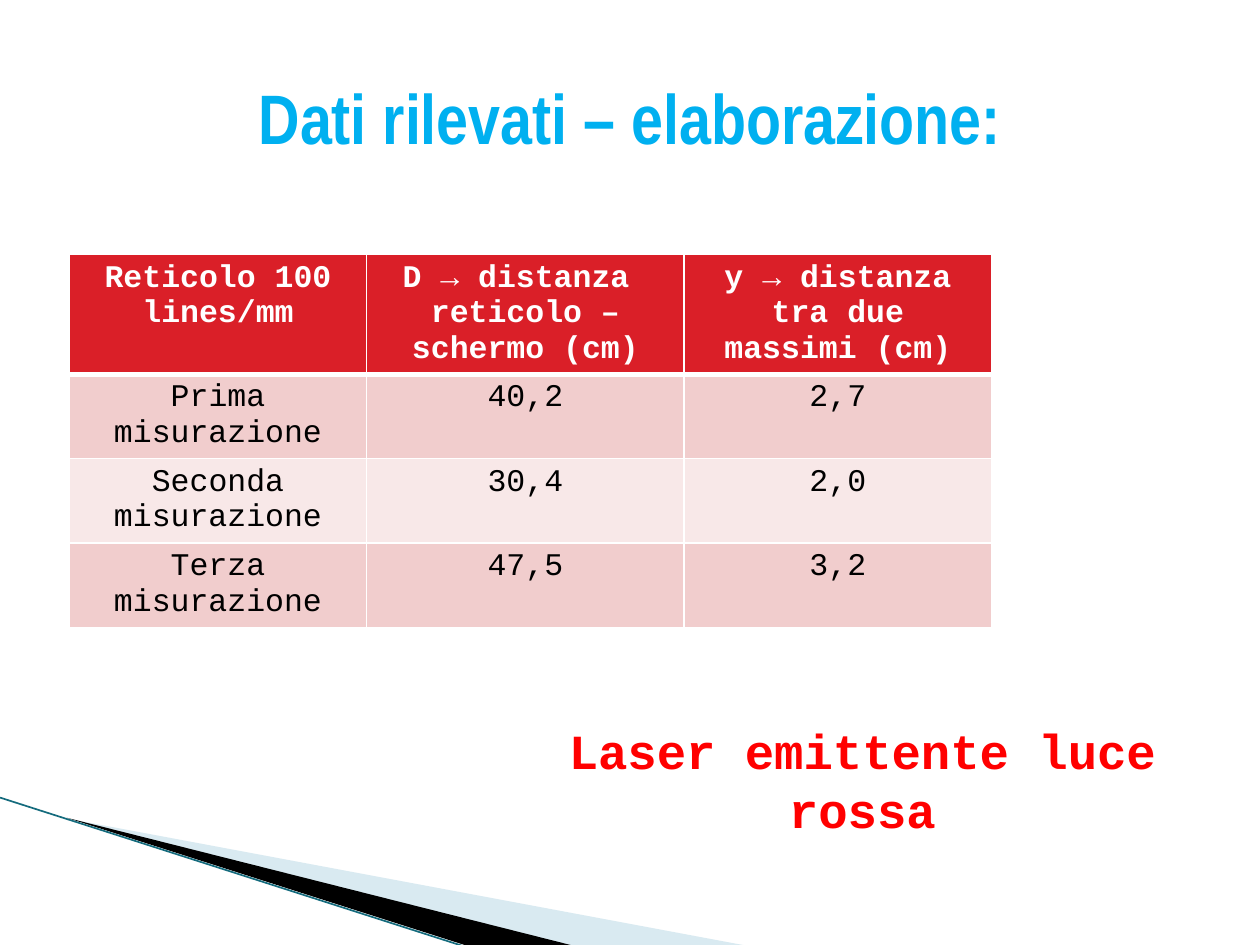
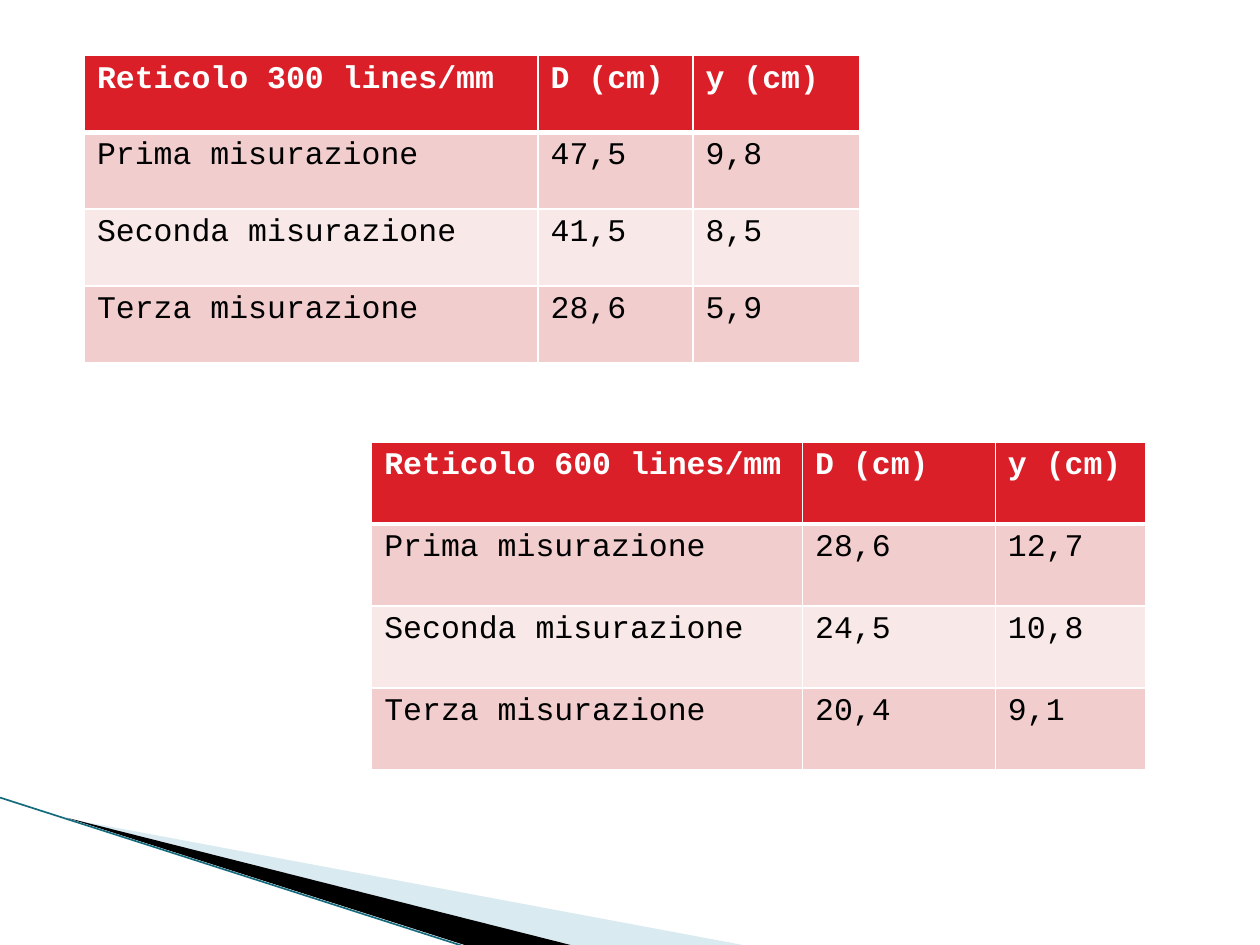
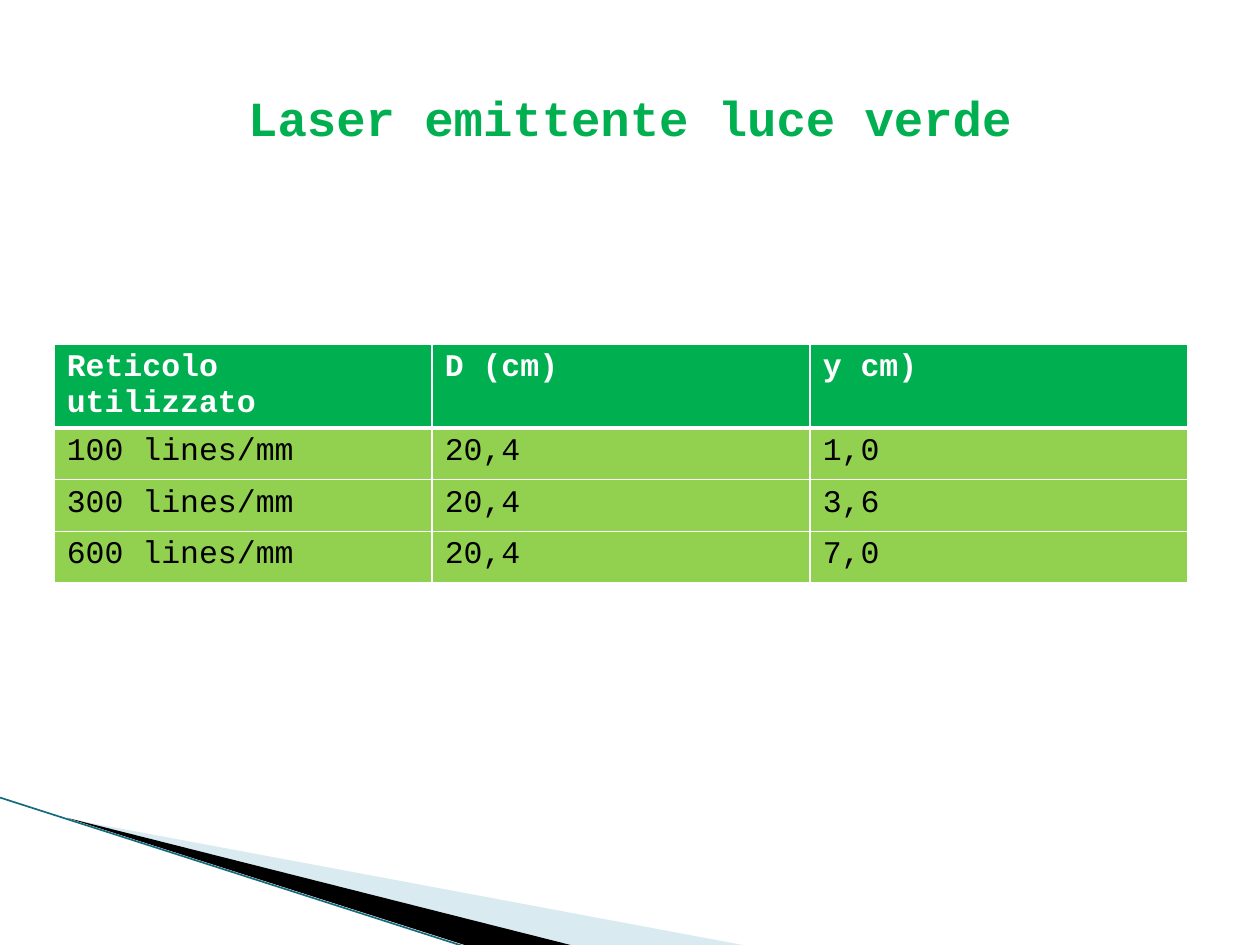
from lxml import etree
from pptx import Presentation
from pptx.dml.color import RGBColor
from pptx.enum.shapes import MSO_CONNECTOR
from pptx.enum.text import MSO_ANCHOR, PP_ALIGN
from pptx.oxml.ns import qn
from pptx.util import Inches, Pt

CENTER, LEFT = PP_ALIGN.CENTER, PP_ALIGN.LEFT
MIDDLE, TOP = MSO_ANCHOR.MIDDLE, MSO_ANCHOR.TOP
STRAIGHT = MSO_CONNECTOR.STRAIGHT
WIDTH, HEIGHT = 10, 7.5
BLANK_LAYOUT = 6

COLORS = {
    "white": "FFFFFF", "black": "000000", "sky": "00B0F0", "red": "FF0000",
    "crimson": "DA1F28", "rose": "F1CDCD", "blush": "F8E8E8",
    "green": "00B050", "lime": "92D050", "mist": "A0CBDC", "teal": "146B7D",
}
TITLE = {"name": "Arial Narrow", "size": Pt(40), "bold": True}
LASER = {"name": "Courier New", "size": Pt(28), "bold": True}
HEADER = {"name": "Courier New", "size": Pt(18), "bold": True}
BODY = {**HEADER, "bold": False}

# Table palettes: header, odd rows, even rows
RED_TABLE = ("crimson", "rose", "blush")
GREEN_TABLE = ("green", "lime", "lime")

# Corner decoration: outline points, colour, opacity in percent
WEDGES = [
    ([(0.55, 6.5), (5.95, 7.51), (4.56, 7.51)], "mist", 40),
    ([(0.53, 6.49), (4.57, 7.51), (3.72, 7.51)], "black", 100),
]
EDGE_LINE = (0, 6.33, 3.71, 7.52)

# Content
MEASURES = ["Prima misurazione", "Seconda misurazione", "Terza misurazione"]
SLIDES = [
    {
        "texts": [
            ("Dati rilevati – elaborazione:", (0, 0.3, WIDTH, 1.25), TITLE, "sky", MIDDLE),
            ("Laser emittente luce rossa", (4.21, 5.67, 5.27, 1.04), LASER, "red", TOP),
        ],
        "tables": [{
            "at": (0.55, 2.02), "columns": (2.36, 2.52, 2.44), "rows": (0.95, 0.67),
            "palette": RED_TABLE, "align": CENTER,
            "header": ["Reticolo 100 lines/mm",
                       "D → distanza \nreticolo –schermo (cm)",
                       "y → distanza tra due massimi (cm)"],
            "labels": MEASURES,
            "values": [("40,2", "2,7"), ("30,4", "2,0"), ("47,5", "3,2")],
        }],
    },
    {
        "texts": [],
        "tables": [
            {
                "at": (0.67, 0.44), "columns": (3.6, 1.23, 1.32), "rows": (0.61, 0.61),
                "palette": RED_TABLE, "align": LEFT,
                "header": ["Reticolo 300 lines/mm", "D (cm)", "y (cm)"],
                "labels": MEASURES,
                "values": [("47,5", "9,8"), ("41,5", "8,5"), ("28,6", "5,9")],
            },
            {
                "at": (2.95, 3.51), "columns": (3.42, 1.53, 1.19), "rows": (0.65, 0.65),
                "palette": RED_TABLE, "align": LEFT,
                "header": ["Reticolo 600 lines/mm", "D (cm)", "y (cm)"],
                "labels": MEASURES,
                "values": [("28,6", "12,7"), ("24,5", "10,8"), ("20,4", "9,1")],
            },
        ],
    },
    {
        "texts": [
            ("Laser emittente luce verde", (0.5, 0.3, 9, 1.25), LASER, "green", MIDDLE),
        ],
        "tables": [{
            "at": (0.43, 2.73), "columns": (3, 3, 3), "rows": (0.66, 0.41),
            "palette": GREEN_TABLE, "align": LEFT,
            "header": ["Reticolo utilizzato", "D (cm)", "y cm)"],
            "labels": ["100 lines/mm", "300 lines/mm", "600 lines/mm"],
            "values": [("20,4", "1,0"), ("20,4", "3,6"), ("20,4", "7,0")],
        }],
    },
]


def rgb(color):
    return RGBColor.from_string(COLORS[color])


def paint(fill, color):
    fill.solid()
    fill.fore_color.rgb = rgb(color)


def format_text(text_frame, style, color, align):
    for paragraph in text_frame.paragraphs:
        paragraph.alignment = align
        for run in paragraph.runs:
            for attribute, value in style.items():
                setattr(run.font, attribute, value)
            run.font.color.rgb = rgb(color)


def add_decoration(slide):
    for points, color, opacity in WEDGES:
        corners = [(Inches(x), Inches(y)) for x, y in points]
        builder = slide.shapes.build_freeform(*corners[0])
        builder.add_line_segments(corners[1:], close=True)
        wedge = builder.convert_to_shape()
        wedge.shadow.inherit = False
        wedge.line.fill.background()
        paint(wedge.fill, color)
        if opacity < 100:
            color_element = next(wedge.element.spPr.iter(qn("a:srgbClr")))
            etree.SubElement(color_element, qn("a:alpha"), val=str(opacity * 1000))
    edge = slide.shapes.add_connector(STRAIGHT, *map(Inches, EDGE_LINE))
    edge.line.color.rgb = rgb("teal")
    edge.line.width = Pt(0.95)
    etree.SubElement(edge.element.spPr, qn("a:effectLst"))


def add_text(slide, text, box, style, color, anchor):
    shape = slide.shapes.add_textbox(*map(Inches, box))
    text_frame = shape.text_frame
    text_frame.word_wrap = True
    text_frame.vertical_anchor = anchor
    text_frame.text = text
    format_text(text_frame, style, color, CENTER)


def add_borders(cell, widths):
    properties = cell._tc.get_or_add_tcPr()
    for side, width in widths.items():
        line = etree.SubElement(properties, qn(f"a:ln{side}"), w=str(Pt(width)))
        fill = etree.SubElement(line, qn("a:solidFill"))
        etree.SubElement(fill, qn("a:srgbClr"), val=COLORS["white"])


def add_data_table(slide, data):
    rows = [data["header"]]
    rows += [(label, *values) for label, values in zip(data["labels"], data["values"])]
    header_height, row_height = data["rows"]
    heights = [header_height] + [row_height] * len(data["labels"])
    size = sum(data["columns"]), sum(heights)
    frame = slide.shapes.add_table(len(rows), len(data["columns"]),
                                   *map(Inches, data["at"] + size))
    table = frame.table
    for column, width in zip(table.columns, data["columns"]):
        column.width = Inches(width)
    header_fill, odd_fill, even_fill = data["palette"]
    for index, texts in enumerate(rows):
        table.rows[index].height = Inches(heights[index])
        is_header = index == 0
        fill = header_fill if is_header else odd_fill if index % 2 else even_fill
        style, color = (HEADER, "white") if is_header else (BODY, "black")
        widths = {"L": 1, "R": 1, "T": 3 if index == 1 else 1, "B": 3 if is_header else 1}
        for cell, text in zip(table.rows[index].cells, texts):
            cell.text = text
            format_text(cell.text_frame, style, color, data["align"])
            add_borders(cell, widths)
            paint(cell.fill, fill)


def main():
    presentation = Presentation()
    presentation.slide_width = Inches(WIDTH)
    presentation.slide_height = Inches(HEIGHT)
    for content in SLIDES:
        slide = presentation.slides.add_slide(presentation.slide_layouts[BLANK_LAYOUT])
        paint(slide.background.fill, "white")
        add_decoration(slide)
        for data in content["tables"]:
            add_data_table(slide, data)
        for text in content["texts"]:
            add_text(slide, *text)
    presentation.save("out.pptx")


if __name__ == "__main__":
    main()
